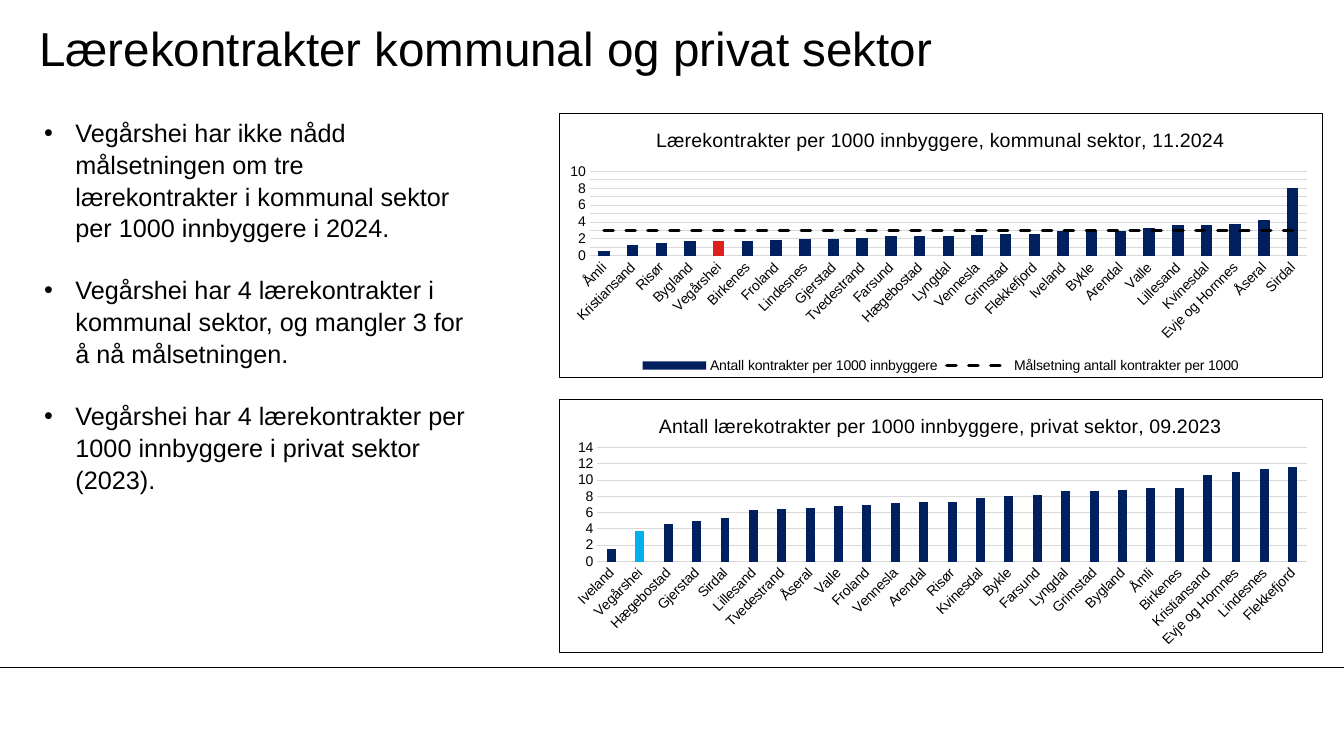
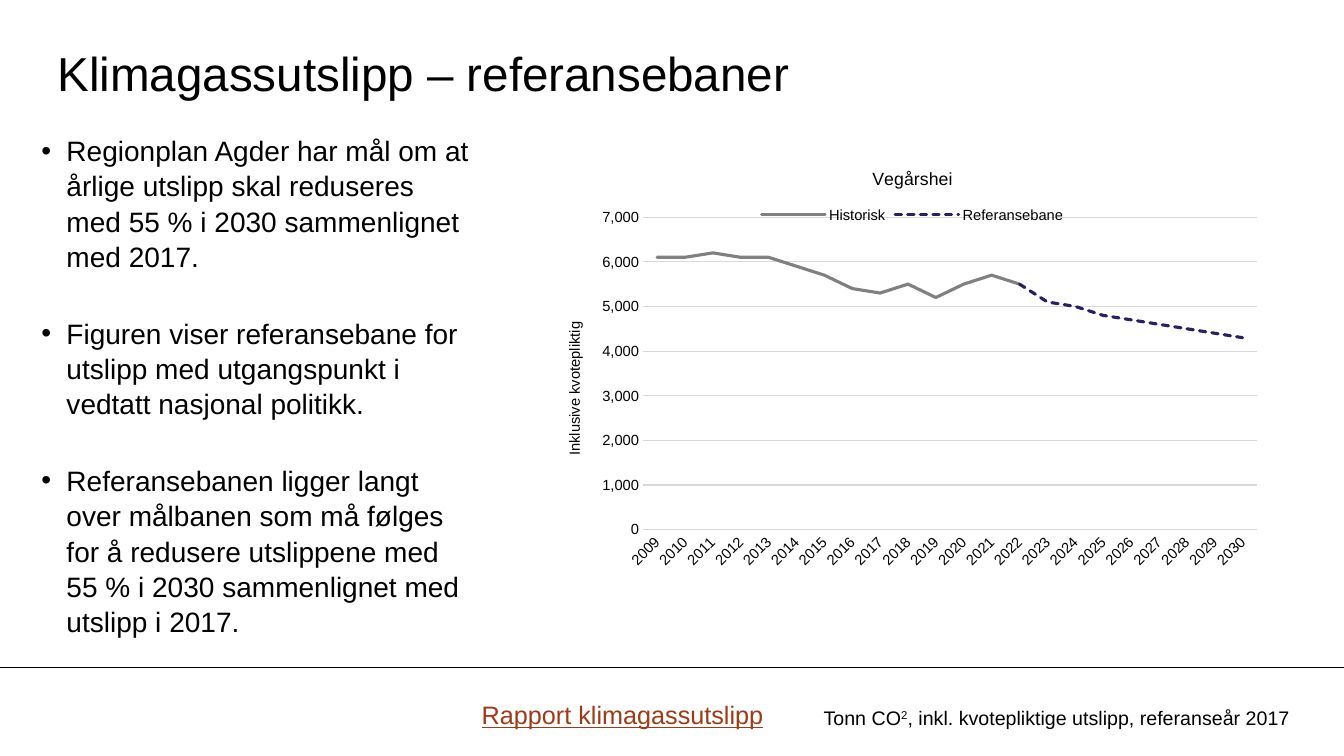
from dataclasses import dataclass

from lxml import etree
from pptx import Presentation
from pptx import util as u
from pptx.chart import data as cd
from pptx.dml.color import RGBColor
from pptx.enum import chart as ce
from pptx.enum import dml, shapes, text
from pptx.oxml import ns, parse_xml


@dataclass(frozen=True)
class Theme:
    font: str = "Arial"
    ink: str = "000000"
    grid: str = "D9D9D9"
    navy: str = "002060"
    red: str = "DF1F1D"
    sky: str = "00B0F0"
    gray: str = "808080"
    plum: str = "272164"
    rust: str = "9F3A14"
    head: float = 34
    lead: float = 20
    body: float = 18
    note: float = 14
    name: float = 12.6
    axis: float = 10.5
    tiny: float = 10
    hair: float = 0.75
    bold: float = 2.25
    pitch: float = 1.05


T = Theme()
WIDE, HIGH = 1333, 750


def px(n):
    """Lengths: 100 px to the inch."""
    return u.Emu(n * 9144)


def rgb(hue):
    return RGBColor.from_string(hue)


def style(font, size, hue=T.ink):
    font.name, font.size, font.bold = T.font, u.Pt(size), False
    font.color.rgb = rgb(hue)


def stroke(line, hue, width=T.hair, dash=None):
    line.color.rgb = rgb(hue)
    line.width = u.Pt(width)
    if dash is not None:
        line.dash_style = dash


# Text regions
def frame(slide, box, inset=0):
    tf = slide.shapes.add_textbox(*map(px, box)).text_frame
    tf.word_wrap = True
    tf.margin_left = tf.margin_right = px(inset)
    tf.margin_top = tf.margin_bottom = px(inset // 2)
    return tf


def label(slide, box, words, size, hue=T.ink, inset=10):
    tf = frame(slide, box, inset)
    tf.text = words
    style(tf.paragraphs[0].runs[0].font, size, hue)
    return tf


def base(deck, title, box):
    """Blank slide with the shared rule and title."""
    slide = deck.slides.add_slide(deck.slide_layouts[6])
    rule = slide.shapes.add_connector(
        shapes.MSO_CONNECTOR.STRAIGHT, 0, px(662), px(WIDE), px(662))
    stroke(rule.line, T.ink)
    etree.SubElement(rule._element.spPr, ns.qn("a:effectLst"))
    tf = label(slide, box, title, T.head, inset=0)
    tf.vertical_anchor = text.MSO_ANCHOR.MIDDLE
    return slide


def points(slide, box, items, size, hang, gap, inset=0):
    """Bulleted list with even gaps."""
    tf = frame(slide, box, inset)
    for i, item in enumerate(items):
        para = tf.add_paragraph() if i else tf.paragraphs[0]
        para.text = item
        para.line_spacing = T.pitch
        para.space_before = u.Pt(gap if i else 0)
        prop = para._p.get_or_add_pPr()
        prop.set("marL", str(px(hang)))
        prop.set("indent", str(-px(hang)))
        mark = etree.SubElement(prop, ns.qn("a:buFont"))
        mark.set("typeface", T.font)
        etree.SubElement(prop, ns.qn("a:buChar")).set("char", "•")
        style(para.runs[0].font, size)


# Chart parts
def graph(slide, kind, box, title, cats, rows, plot, size, tsize, fmt="0",
          top=None, step=None):
    data = cd.CategoryChartData()
    data.categories = cats
    for name, vals in rows:
        data.add_series(name, vals)
    chart = slide.shapes.add_chart(kind, *map(px, box), data).chart
    style(chart.font, size)
    chart.has_legend = False
    chart.has_title = True
    tf = chart.chart_title.text_frame
    tf.text = title
    style(tf.paragraphs[0].runs[0].font, tsize)
    chart.plots[0].vary_by_categories = False

    cat, val = chart.category_axis, chart.value_axis
    for axis in (cat, val):
        axis.major_tick_mark = axis.minor_tick_mark = ce.XL_TICK_MARK.NONE
        style(axis.tick_labels.font, size)
    stroke(cat.format.line, T.grid)
    turn(chart, "//c:catAx/c:txPr/a:bodyPr", -45)
    val.format.line.fill.background()
    val.has_major_gridlines = True
    stroke(val.major_gridlines.format.line, T.grid)
    val.tick_labels.number_format = fmt
    val.tick_labels.number_format_is_linked = False
    val.minimum_scale = 0
    if top:
        val.maximum_scale = top
    if step:
        val.major_unit = step
    place(chart, plot)
    return chart


def turn(chart, where, angle):
    for body in chart.element.xpath(where):
        body.set("rot", str(angle * 60000))
        body.set("vert", "horz")


def place(chart, plot):
    """Fix the inner plot area, in shares of the chart."""
    area = chart.element.xpath("//c:plotArea")[0]
    for old in area.findall(ns.qn("c:layout")):
        area.remove(old)
    parts = [("layoutTarget", "inner"), ("xMode", "edge"), ("yMode", "edge")]
    parts += zip("xywh", plot)
    inner = "".join(f'<c:{tag} val="{val}"/>' for tag, val in parts)
    area.insert(0, parse_xml(
        f'<c:layout {ns.nsdecls("c")}><c:manualLayout>{inner}'
        '</c:manualLayout></c:layout>'))


def border(chart):
    chart.element.find(ns.qn("c:chart")).addnext(parse_xml(
        f'<c:spPr {ns.nsdecls("c", "a")}><a:noFill/>'
        f'<a:ln w="{u.Pt(T.hair)}"><a:solidFill><a:srgbClr val="{T.ink}"/>'
        '</a:solidFill></a:ln></c:spPr>'))


def legend(chart, spot, size):
    chart.has_legend = True
    chart.legend.position = spot
    chart.legend.include_in_layout = False
    style(chart.legend.font, size)


def trace(ser, hue, dash=None):
    stroke(ser.format.line, hue, T.bold, dash)
    ser.format.line._ln.set("cap", "rnd")
    ser.smooth = False
    ser.marker.style = ce.XL_MARKER_STYLE.NONE


def overlay(chart):
    """Move the last bar series to a line plot on the same axes."""
    bars = chart.element.xpath("//c:barChart")[0]
    ser = bars.findall(ns.qn("c:ser"))[-1]
    for flag in ser.findall(ns.qn("c:invertIfNegative")):
        ser.remove(flag)
    line = parse_xml(
        f'<c:lineChart {ns.nsdecls("c")}><c:grouping val="standard"/>'
        '<c:varyColors val="0"/><c:marker val="1"/></c:lineChart>')
    line.insert(2, ser)
    for ref in bars.findall(ns.qn("c:axId")):
        etree.SubElement(line, ns.qn("c:axId")).set("val", ref.get("val"))
    bars.addnext(line)
    return chart.plots[1].series[0]


def columns(slide, box, title, cats, rows, plot, top, step, gap, lap, mark):
    chart = graph(slide, ce.XL_CHART_TYPE.COLUMN_CLUSTERED, box, title, cats,
                  rows, plot, T.tiny, T.note, top=top, step=step)
    bars = chart.plots[0]
    bars.gap_width, bars.overlap = gap, lap
    ser = bars.series[0]
    ser.invert_if_negative = False
    spot, hue = mark
    for part, tint in ((ser, T.navy), (ser.points[spot], hue)):
        part.format.fill.solid()
        part.format.fill.fore_color.rgb = rgb(tint)
    border(chart)
    return chart


# Slides
def trade(deck):
    slide = base(deck, "Lærekontrakter kommunal og privat sektor",
                 (39, 10, 1110, 75))
    points(slide, (34, 110, 445, 464), [
        "Vegårshei har ikke nådd målsetningen om tre lærekontrakter i "
        "kommunal sektor per 1000 innbyggere i 2024.",
        "Vegårshei har 4 lærekontrakter i kommunal sektor, og mangler 3 for "
        "å nå målsetningen.",
        "Vegårshei har 4 lærekontrakter per 1000 innbyggere i privat sektor "
        "(2023).",
    ], T.body, 31, 21.7, 10)

    # Private sector
    cats = ["Iveland", "Vegårshei", "Hægebostad", "Gjerstad", "Sirdal",
            "Lillesand", "Tvedestrand", "Åseral", "Valle", "Froland",
            "Vennesla", "Arendal", "Risør", "Kvinesdal", "Bykle", "Farsund",
            "Lyngdal", "Grimstad", "Bygland", "Åmli", "Birkenes",
            "Kristiansand", "Evje og Hornnes", "Lindesnes", "Flekkefjord"]
    vals = [1.5, 3.7, 4.6, 5, 5.4, 6.3, 6.5, 6.6, 6.8, 7, 7.2, 7.3, 7.3, 7.8,
            8, 8.2, 8.7, 8.7, 8.8, 9, 9.1, 10.6, 11, 11.4, 11.6]
    columns(slide, (554, 396, 758, 252),
            "Antall lærekotrakter per 1000 innbyggere, privat sektor, 09.2023",
            cats, [("Series 1", vals)], (0.05, 0.19, 0.93, 0.45),
            14, 2, 219, -27, (1, T.sky))

    # Municipal sector, with the target line
    cats = ["Åmli", "Kristiansand", "Risør", "Bygland", "Vegårshei",
            "Birkenes", "Froland", "Lindesnes", "Gjerstad", "Tvedestrand",
            "Farsund", "Hægebostad", "Lyngdal", "Vennesla", "Grimstad",
            "Flekkefjord", "Iveland", "Bykle", "Arendal", "Valle",
            "Lillesand", "Kvinesdal", "Evje og Hornnes", "Åseral", "Sirdal"]
    vals = [0.6, 1.3, 1.5, 1.8, 1.8, 1.8, 1.9, 2, 2, 2.1, 2.3, 2.3, 2.3, 2.5,
            2.6, 2.6, 2.9, 3, 3, 3.3, 3.6, 3.7, 3.8, 4.3, 8]
    chart = columns(
        slide, (554, 112, 758, 263),
        "Lærekontrakter per 1000 innbyggere, kommunal sektor, 11.2024", cats,
        [("Antall kontrakter per 1000 innbyggere", vals),
         ("Målsetning antall kontrakter per 1000", [3] * len(cats))],
        (0.04, 0.22, 0.94, 0.32), 10, 1, 150, 0, (4, T.red))
    trace(overlay(chart), T.ink, dml.MSO_LINE.DASH)
    legend(chart, ce.XL_LEGEND_POSITION.BOTTOM, T.tiny)


def climate(deck):
    slide = base(deck, "Klimagassutslipp – referansebaner",
                 (57, 34, 1110, 75))
    points(slide, (41, 131, 427, 517), [
        "Regionplan Agder har mål om at årlige utslipp skal reduseres med "
        "55 % i 2030 sammenlignet med 2017.",
        "Figuren viser referansebane for utslipp med utgangspunkt i vedtatt "
        "nasjonal politikk.",
        "Referansebanen ligger langt over målbanen som må følges for å "
        "redusere utslippene med 55 % i 2030 sammenlignet med utslipp i 2017.",
    ], T.lead, 25, 29.6)

    # Footer notes
    para = label(slide, (807, 695, 509, 34), "Tonn CO", T.note).paragraphs[0]
    for words, lift in (("2", 30000),
                        (", inkl. kvotepliktige utslipp, referanseår 2017", 0)):
        run = para.add_run()
        run.text = words
        style(run.font, T.note)
        run._r.get_or_add_rPr().set("baseline", str(lift))
    link = label(slide, (468, 689, 316, 40), "Rapport klimagassutslipp",
                 T.body, T.rust)
    link.paragraphs[0].runs[0].font.underline = True

    # Emission paths, which meet in 2022
    past = [6100, 6100, 6200, 6100, 6100, 5900, 5700, 5400, 5300, 5500, 5200,
            5500, 5700, 5500]
    path = [5500, 5100, 5000, 4800, 4700, 4600, 4500, 4400, 4300]
    years = [str(y) for y in range(2009, 2031)]
    rows = [("Historisk", past + [None] * (len(years) - len(past))),
            ("Referansebane", [None] * (len(years) - len(path)) + path)]
    chart = graph(slide, ce.XL_CHART_TYPE.LINE, (534, 149, 742, 443),
                  "Vegårshei", years, rows, (0.14, 0.15, 0.82, 0.7),
                  T.axis, T.name, "#,##0", 7000, 1000)
    solid, dashed = chart.plots[0].series
    trace(solid, T.gray)
    trace(dashed, T.plum, dml.MSO_LINE.SQUARE_DOT)
    legend(chart, ce.XL_LEGEND_POSITION.TOP, T.axis)
    tf = chart.value_axis.axis_title.text_frame
    tf.text = "Inklusive kvotepliktig"
    style(tf.paragraphs[0].runs[0].font, T.axis)
    turn(chart, "//c:valAx/c:title//a:bodyPr", -90)


def main():
    deck = Presentation()
    deck.slide_width, deck.slide_height = px(WIDE), px(HIGH)
    trade(deck)
    climate(deck)
    deck.save("out.pptx")


if __name__ == "__main__":
    main()
